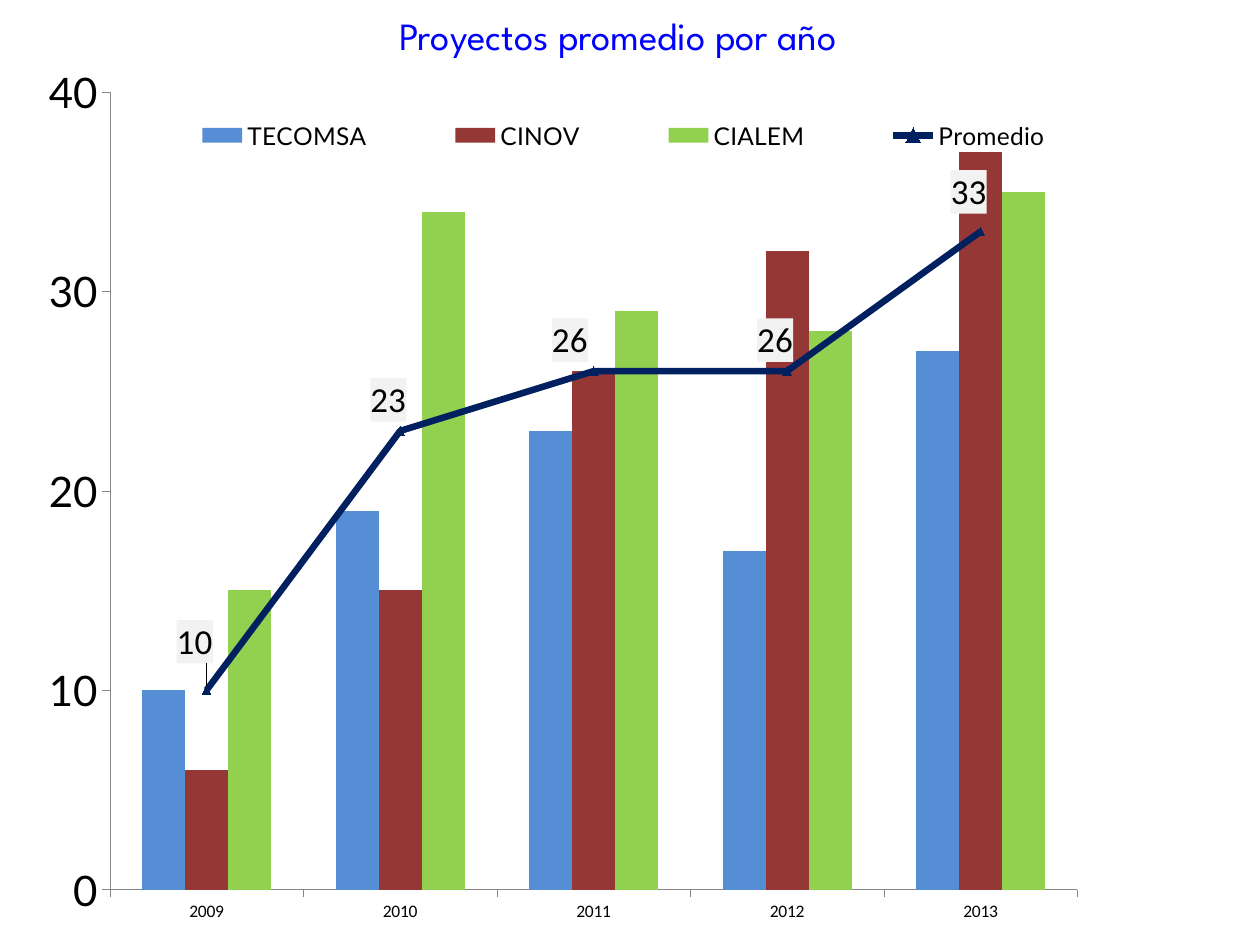
"""Build a slide with yearly projects per centre and their average."""
from copy import deepcopy

from lxml.etree import SubElement
from pptx import Presentation
from pptx.chart.data import CategoryChartData
from pptx.dml.color import RGBColor
from pptx.enum.chart import XL_CHART_TYPE as CT, XL_LABEL_POSITION as LP
from pptx.enum.chart import XL_LEGEND_POSITION, XL_MARKER_STYLE, XL_TICK_MARK
from pptx.enum.text import MSO_ANCHOR, PP_ALIGN
from pptx.oxml import parse_xml
from pptx.oxml.ns import nsdecls, qn
from pptx.util import Cm, Pt

BLUE = RGBColor(0x00, 0x00, 0xFF)
BLACK = RGBColor(0x00, 0x00, 0x00)
GREY = RGBColor(0x86, 0x86, 0x86)
NAVY = RGBColor(0x00, 0x20, 0x60)

TITLE = "Proyectos promedio por año"
YEARS = ["2009", "2010", "2011", "2012", "2013"]
CENTRES = [
    ("TECOMSA", [10, 19, 23, 17, 27], RGBColor(0x55, 0x8E, 0xD5)),
    ("CINOV", [6, 15, 26, 32, 37], RGBColor(0x95, 0x37, 0x35)),
    ("CIALEM", [15, 34, 29, 28, 35], RGBColor(0x92, 0xD0, 0x50)),
]
AVERAGE = "Promedio"
PLOT_BOX = {"x": 0.06, "y": 0.03, "w": 0.81, "h": 0.92}
LEGEND_BOX = {"x": 0.07, "y": 0.05, "w": 0.84, "h": 0.06}
LABEL_SHIFTS = [(-0.01, -0.02), (-0.01, 0), (-0.02, 0), (-0.01, 0), (-0.01, -0.01)]


def make_layout(box, inner=False, edge=True):
    layout = parse_xml(f"<c:layout {nsdecls('c')}><c:manualLayout/></c:layout>")
    manual = layout[0]
    if inner:
        SubElement(manual, qn("c:layoutTarget")).set("val", "inner")
    if edge:
        for key in "xy":
            SubElement(manual, qn(f"c:{key}Mode")).set("val", "edge")
    for key, value in box.items():
        SubElement(manual, qn(f"c:{key}")).set("val", str(value))
    return layout


def set_layout(parent, before, layout):
    for old in parent.findall(qn("c:layout")):
        parent.remove(old)
    parent.find(qn(before)).addnext(layout)


def move_last_series_to_line(chart):
    ser = chart.plots[0].series[-1]._element
    bar_xml = ser.getparent()
    for old in ser.findall(qn("c:invertIfNegative")):
        ser.remove(old)
    line_xml = parse_xml(
        f'<c:lineChart {nsdecls("c")}><c:grouping val="standard"/>'
        '<c:varyColors val="0"/><c:marker val="1"/></c:lineChart>')
    line_xml.insert(2, ser)
    for axis_id in bar_xml.findall(qn("c:axId")):
        line_xml.append(deepcopy(axis_id))
    bar_xml.addnext(line_xml)
    return chart.plots[1].series[0]


def format_average(line):
    line.smooth = False
    line.format.line.color.rgb = NAVY
    line.format.line.width = Pt(3.75)
    line.marker.style = XL_MARKER_STYLE.TRIANGLE
    line.marker.size = 5
    line.marker.format.fill.solid()
    line.marker.format.fill.fore_color.rgb = NAVY
    line.marker.format.line.color.rgb = NAVY
    labels = line.data_labels
    labels.show_value = True
    labels.number_format, labels.number_format_is_linked = "0", False
    labels.font.size, labels.font.name = Pt(20), "Calibri"
    labels.position = LP.ABOVE
    shade = parse_xml(
        f'<c:spPr {nsdecls("c", "a")}><a:solidFill><a:srgbClr val="F2F2F2"/>'
        '</a:solidFill></c:spPr>')
    labels._element.find(qn("c:numFmt")).addnext(shade)
    shared = [labels._element.find(qn(f"c:{tag}")) for tag in ("txPr", "spPr", "numFmt")]
    for i in range(len(YEARS)):
        line.points[i].data_label.position = LP.ABOVE
    for label, (x, y) in zip(labels._element.findall(qn("c:dLbl")), LABEL_SHIFTS):
        for part in shared:
            for old in label.findall(part.tag):
                label.remove(old)
            label.find(qn("c:idx")).addnext(deepcopy(part))
        set_layout(label, "c:idx", make_layout({"x": x, "y": y}, edge=False))


def format_axes(chart):
    for axis in (chart.category_axis, chart.value_axis):
        axis.has_major_gridlines = False
        axis.major_tick_mark = XL_TICK_MARK.OUTSIDE
        axis.format.line.color.rgb = GREY
        axis.format.line.width = Pt(0.25)
    values = chart.value_axis
    values.minimum_scale, values.maximum_scale, values.major_unit = 0, 40, 10
    values.tick_labels.font.size = Pt(24)
    values.tick_labels.font.name = "Lato"


def add_title(s):
    sp = s.shapes.title
    sp.left, sp.top, sp.width, sp.height = Cm(7.79), Cm(0.11), Cm(11.25), Cm(1.2)
    tf = sp.text_frame
    tf.text = TITLE
    tf.word_wrap = False
    tf.vertical_anchor = MSO_ANCHOR.TOP
    p = tf.paragraphs[0]
    p.alignment = PP_ALIGN.LEFT
    p.font.size, p.font.name = Pt(22), "League Spartan"
    p.font.color.rgb = BLUE


def add_projects_chart(s):
    data = CategoryChartData()
    data.categories = YEARS
    for name, values, _ in CENTRES:
        data.add_series(name, values)
    by_year = zip(*(values for _, values, _ in CENTRES))
    data.add_series(AVERAGE, [round(sum(v) / len(v)) for v in by_year])
    chart = s.shapes.add_chart(
        CT.COLUMN_CLUSTERED, Cm(0.77), Cm(1.33), Cm(24.08), Cm(17.48), data).chart
    chart.has_title = False
    chart.font.size, chart.font.name = Pt(10), "Calibri"
    chart.font.color.rgb = BLACK
    format_average(move_last_series_to_line(chart))

    bars = chart.plots[0]
    bars.gap_width, bars.overlap = 150, 0
    bars.vary_by_categories = False
    for series, (_, _, color) in zip(bars.series, CENTRES):
        series.format.fill.solid()
        series.format.fill.fore_color.rgb = color
    format_axes(chart)

    chart.has_legend = True
    legend = chart.legend
    legend.position = XL_LEGEND_POSITION.RIGHT
    legend.include_in_layout = False
    legend.font.size, legend.font.name = Pt(14), "Lato"
    set_layout(legend._element, "c:legendPos", make_layout(LEGEND_BOX))
    plot_area = chart._chartSpace.chart.plotArea
    for old in plot_area.findall(qn("c:layout")):
        plot_area.remove(old)
    plot_area.insert(0, make_layout(PLOT_BOX, inner=True))


def main():
    prs = Presentation()
    prs.slide_width, prs.slide_height = Cm(25.4), Cm(19.05)
    s = prs.slides.add_slide(prs.slide_layouts[5])
    add_title(s)
    add_projects_chart(s)
    prs.save("out.pptx")


if __name__ == "__main__":
    main()
